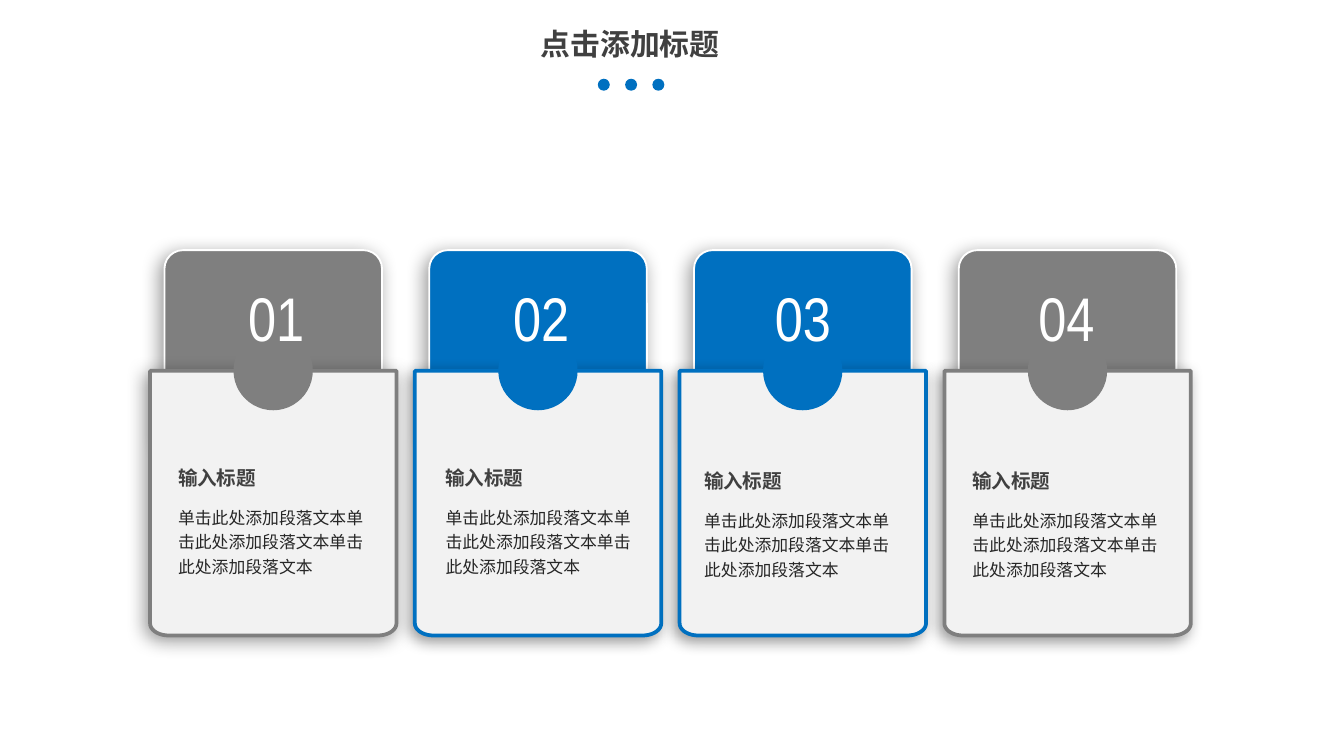
import math

import pptx
import pptx.util
from lxml import etree
from pptx.dml.color import RGBColor
from pptx.enum.shapes import MSO_SHAPE
from pptx.enum.text import MSO_AUTO_SIZE, PP_ALIGN
from pptx.oxml.ns import qn

Pt = pptx.util.Pt

# Content
TITLE = "点击添加标题"
HEADING = "输入标题"
BODY = "单击此处添加段落文本" * 3
# number, colour, number centre x, text left, heading top, panel shadow blur
CARDS = [
    ("01", "gray", 148, 90, 247, 10),
    ("02", "blue", 290, 233.3, 247, 8),
    ("03", "blue", 430.2, 371.8, 248.6, 8),
    ("04", "gray", 571.3, 515.5, 248.6, 8),
]

COLORS = {
    "gray": "7F7F7F", "blue": "0070C0", "white": "FFFFFF",
    "panel": "F2F2F2", "dark": "404040", "body": "262626", "shadow": "000000",
}
CJK, NARROW = "Noto Sans CJK SC", "Arial Narrow"

# Layout, in points
CARD_LEFT, CARD_STEP = 80.4, 141.84
TAB_DX, TAB_TOP, TAB_W, TAB_H = 7.7, 134, 116.6, 107.3
PANEL_TOP, PANEL_W, PANEL_H = 198.7, 132, 141.8
CORNER_W, CORNER_H = 10, 6.5
KNOB, KNOB_DX, KNOB_TOP = 42.5, 44.7, 177.3
DOT, DOT_LEFT, DOT_TOP, DOT_STEP = 6.4, 320.3, 42.2, 14.6

prs = pptx.Presentation()
prs.slide_width, prs.slide_height = Pt(720), Pt(405)
s = prs.slides.add_slide(prs.slide_layouts[6])


def rgb(name):
    return RGBColor.from_string(COLORS[name])


def style(sp, fill, line=None, width=1, blur=None):
    sp.fill.solid()
    sp.fill.fore_color.rgb = rgb(fill)
    if line:
        sp.line.color.rgb = rgb(line)
        sp.line.width = Pt(width)
    else:
        sp.line.fill.background()
    sp.shadow.inherit = False
    if blur:
        effects = sp._element.spPr.find(qn("a:effectLst"))
        shadow = etree.SubElement(
            effects, qn("a:outerShdw"), blurRad=str(Pt(blur)),
            dist=str(Pt(3)), dir=str(135 * 60000), algn="tr", rotWithShape="0")
        color = etree.SubElement(shadow, qn("a:srgbClr"), val=COLORS["shadow"])
        etree.SubElement(color, qn("a:alpha"), val="40000")


def add_shape(kind, x, y, w, h, fill, **look):
    sp = s.shapes.add_shape(kind, Pt(x), Pt(y), Pt(w), Pt(h))
    style(sp, fill, **look)
    return sp


def add_text(text, x, y, w, h, size, color, font=CJK, bold=False,
             align=PP_ALIGN.LEFT, spacing=None, wrap=True, inset=(5.4, 2.7)):
    tf = s.shapes.add_textbox(Pt(x), Pt(y), Pt(w), Pt(h)).text_frame
    tf.word_wrap = wrap
    tf.auto_size = MSO_AUTO_SIZE.SHAPE_TO_FIT_TEXT
    tf.margin_left = tf.margin_right = Pt(inset[0])
    tf.margin_top = tf.margin_bottom = Pt(inset[1])
    p = tf.paragraphs[0]
    p.alignment = align
    if spacing:
        p.line_spacing = spacing
    r = p.add_run()
    r.text = text
    r.font.size, r.font.bold, r.font.name = Pt(size), bold, font
    r.font.color.rgb = rgb(color)
    etree.SubElement(r._r.get_or_add_rPr(), qn("a:ea"), typeface=font)


def add_panel(x, y, line, blur):
    """Square top corners and elliptical bottom corners."""
    right, bottom = x + PANEL_W, y + PANEL_H
    angles = [math.radians(a) for a in range(0, 91, 10)]
    right_arc = [(right - CORNER_W * (1 - math.cos(a)),
                  bottom - CORNER_H * (1 - math.sin(a))) for a in angles]
    left_arc = [(x + right - px, py) for px, py in reversed(right_arc)]
    points = [(right, y)] + right_arc + left_arc
    builder = s.shapes.build_freeform(Pt(x), Pt(y))
    builder.add_line_segments([(Pt(px), Pt(py)) for px, py in points], close=True)
    style(builder.convert_to_shape(), "panel", line=line, width=2, blur=blur)


# Title and dots
add_text(TITLE, 177.8, 10.1, 319.7, 26.6, 16, "dark", bold=True,
         align=PP_ALIGN.CENTER, inset=(7.2, 3.6))
for i in range(3):
    add_shape(MSO_SHAPE.OVAL, DOT_LEFT + i * DOT_STEP, DOT_TOP, DOT, DOT, "blue")

# Cards
for i, (number, color, center, text_x, heading_y, blur) in enumerate(CARDS):
    x = CARD_LEFT + i * CARD_STEP
    tab = add_shape(MSO_SHAPE.ROUNDED_RECTANGLE, x + TAB_DX, TAB_TOP,
                    TAB_W, TAB_H, color, line="white", blur=10)
    tab.adjustments[0] = 0.093
    add_panel(x, PANEL_TOP, color, blur)
    add_shape(MSO_SHAPE.OVAL, x + KNOB_DX, KNOB_TOP, KNOB, KNOB, color)
    add_text(number, center - 32, 147, 64, 45, 33, "white", font=NARROW,
             align=PP_ALIGN.CENTER, inset=(5, 2.7))
    add_text(BODY, text_x, heading_y + 20.2, 111.6, 44.6, 9, "body", spacing=1.2)
    add_text(HEADING, text_x, heading_y, 53.3, 18, 10.5, "dark", bold=True,
             wrap=False)

prs.save("out.pptx")
